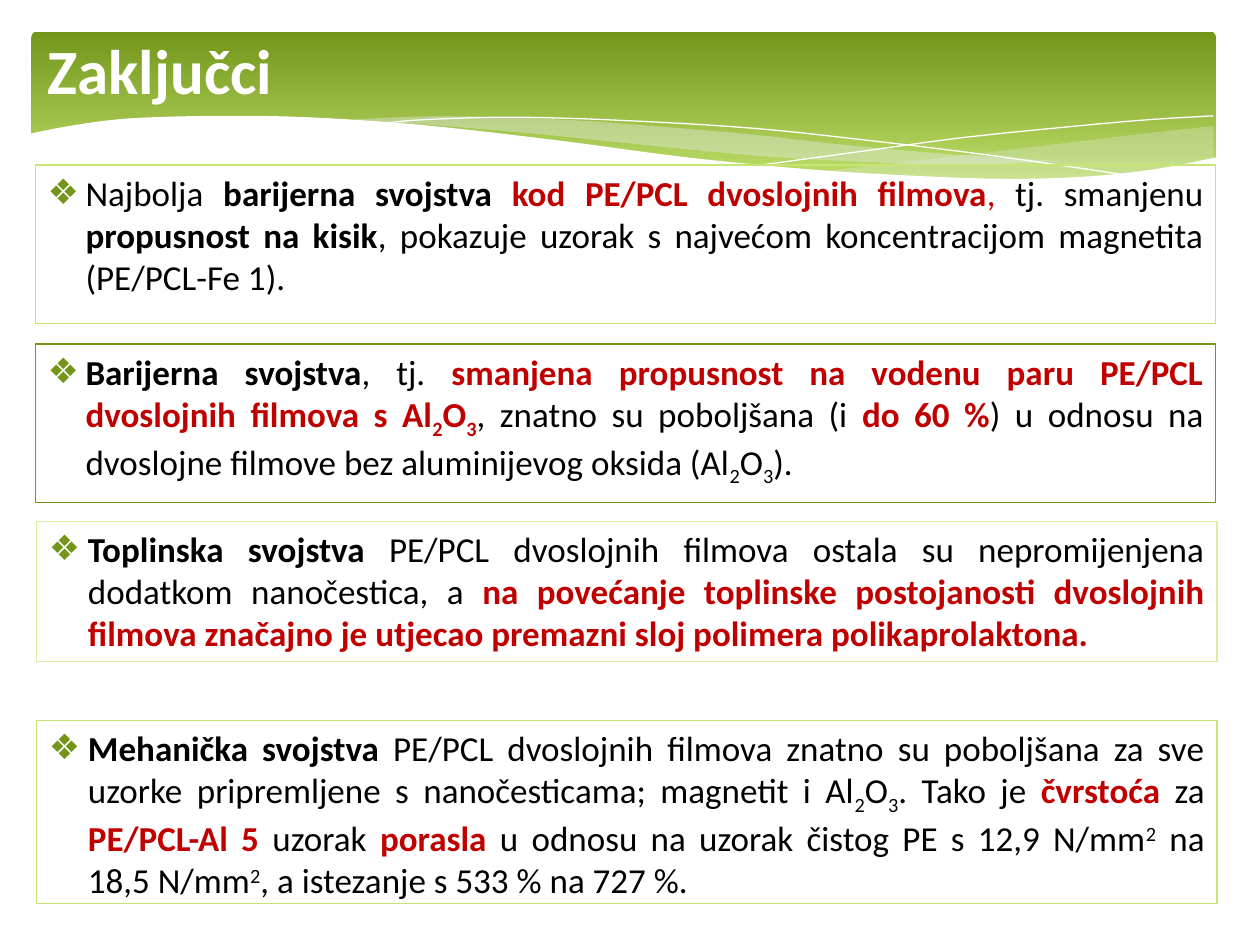
from lxml import etree
from pptx import Presentation
from pptx import util as u
from pptx.dml import color
from pptx.enum import shapes, text
from pptx.oxml import ns

COLOURS = {
    "white": "FFFFFF", "black": "000000", "red": "C00000", "mist": "E7ECED",
    "green": "72951A", "lime": "C5E672", "pale": "D8EEA1",
}

# Curves as points in pt; each is drawn as a smooth line
RIGHT_RIBBON = [
    [(693.5, 72), (654.5, 76.3), (611.3, 81.4), (540, 90), (469.4, 97.9)],
    [(490, 99.4), (528.5, 101.5), (570, 102.3), (619, 101.5), (659.5, 97.2), (693.5, 90.7)],
]
MIDDLE_RIBBON = [
    [(607, 92.2), (549.4, 88.6), (482.4, 82.8), (430.6, 77), (372.2, 72),
     (321, 68.4), (252, 66.4), (201.6, 68.4)],
    [(252.7, 72), (311, 77), (388.8, 85), (445, 90), (501.8, 92.9), (549.4, 94.3), (607, 92.2)],
]
FALLING_LINE = [
    [(218, 70.6), (242.6, 68.4), (294.5, 67), (361.4, 69.1), (431.3, 73.4),
     (493.2, 79.9), (564.5, 88.6), (644.4, 100.1)],
]
RISING_LINE = [
    [(435, 94.3), (493.2, 86.4), (551.5, 78.5), (615.6, 72), (656.6, 68.4), (693.4, 66.2)],
]
WHITE_WAVE = [
    [(694.8, 90), (661, 96.5), (622, 100.8), (574.6, 102.2), (515.5, 100.1),
     (459.4, 96.5), (393.1, 90), (316.1, 79.9), (239.8, 71.3), (175.7, 67),
     (123.8, 66.2), (73.4, 67.7), (39.6, 72), (14.4, 77)],
    [(14.4, 122.6), (694.8, 122.6)],
]

# Conclusions: left, top, width, height, indent, border, runs.
# Run marks: b bold, r red, - subscript, + superscript
CONCLUSIONS = [
    (20.2, 94.3, 674.6, 90.7, 21.6, "lime", [
        ("Najbolja ", ""), ("barijerna svojstva ", "b"),
        ("kod PE/PCL dvoslojnih filmova", "br"), (", ", "r"), ("tj. smanjenu ", ""),
        ("propusnost na kisik", "b"),
        (", pokazuje uzorak s najvećom koncentracijom magnetita (PE/PCL-Fe 1).", "")]),
    (20.2, 196.6, 674.6, 90.7, 21.6, "green", [
        ("Barijerna svojstva", "b"), (", tj. ", ""),
        ("smanjena propusnost na vodenu paru PE/PCL dvoslojnih filmova s Al", "br"),
        ("2", "br-"), ("O", "br"), ("3", "br-"),
        (", znatno su poboljšana (i ", ""), ("do 60 %", "br"),
        (") u odnosu na dvoslojne filmove bez aluminijevog oksida (Al", ""),
        ("2", "-"), ("O", ""), ("3", "-"), (").", "")]),
    (20.9, 298.1, 674.6, 79.9, 22.3, "pale", [
        ("Toplinska svojstva ", "b"),
        ("PE/PCL dvoslojnih filmova ostala su nepromijenjena dodatkom nanočestica, a ", ""),
        ("na povećanje toplinske postojanosti dvoslojnih filmova značajno je utjecao "
         "premazni sloj polimera polikaprolaktona.", "br")]),
    (20.9, 411.8, 674.6, 104.4, 22.3, "lime", [
        ("Mehanička svojstva ", "b"),
        ("PE/PCL dvoslojnih filmova znatno su poboljšana za sve uzorke pripremljene "
         "s nanočesticama; magnetit i Al", ""),
        ("2", "-"), ("O", ""), ("3", "-"), (". Tako je ", ""),
        ("čvrstoća ", "br"), ("za ", ""), ("PE/PCL-Al 5 ", "br"), ("uzorak ", ""),
        ("porasla ", "br"), ("u odnosu na uzorak čistog PE s 12,9 N/mm", ""),
        ("2", "+"), (" na 18,5 N/mm", ""), ("2", "+"),
        (", a istezanje s 533 % na 727 %.", "")]),
]


def smooth(knots, steps=5):
    """Catmull-Rom curve through the knots."""
    if len(knots) < 3:
        return knots
    padded = [knots[0], *knots, knots[-1]]
    curve = [knots[0]]
    for a, b, c, d in zip(padded, padded[1:], padded[2:], padded[3:]):
        for t in (step / steps for step in range(1, steps + 1)):
            curve.append(tuple(
                (2 * q + (r - p) * t + (2 * p - 5 * q + 4 * r - s) * t ** 2
                 + (3 * q - p - 3 * r + s) * t ** 3) / 2
                for p, q, r, s in zip(a, b, c, d)))
    return curve


class Deck:
    font = "Calibri"

    def __init__(self, slide):
        self.slide = slide

    def rgb(self, name):
        return color.RGBColor.from_string(COLOURS[name])

    def shape(self, kind, *box):
        item = self.slide.shapes.add_shape(kind, *map(u.Pt, box))
        item.shadow.inherit = False
        return item

    def banner(self, *box):
        band = self.shape(shapes.MSO_SHAPE.ROUNDED_RECTANGLE, *box)
        band.adjustments[0] = 0.03
        band.line.fill.background()
        band.fill.gradient()
        band.fill.gradient_angle = 270
        for stop, name, position in zip(band.fill.gradient_stops, ("green", "lime"), (0, 0.9)):
            stop.color.rgb = self.rgb(name)
            stop.position = position

    def curve(self, edges, fill=None, opacity=None):
        points = [(u.Pt(x), u.Pt(y)) for edge in edges for x, y in smooth(edge)]
        builder = self.slide.shapes.build_freeform(*points[0])
        builder.add_line_segments(points[1:], close=fill is not None)
        wave = builder.convert_to_shape()
        wave.shadow.inherit = False
        if fill is None:
            wave.fill.background()
            wave.line.color.rgb = self.rgb("white")
            wave.line.width = u.Pt(0)
            return
        wave.line.fill.background()
        wave.fill.solid()
        wave.fill.fore_color.rgb = self.rgb(fill)
        if opacity:
            tint = wave.fill._xPr.find(".//" + ns.qn("a:srgbClr"))
            etree.SubElement(tint, ns.qn("a:alpha"), val=str(opacity * 1000))

    def style(self, run, size, name, bold):
        run.font.name = self.font
        run.font.size = u.Pt(size)
        run.font.bold = bold
        run.font.color.rgb = self.rgb(name)

    def title(self, words, *box):
        frame = self.slide.shapes.add_textbox(*map(u.Pt, box)).text_frame
        frame.word_wrap = True
        frame.vertical_anchor = text.MSO_ANCHOR.MIDDLE
        frame.text = words
        self.style(frame.paragraphs[0].runs[0], 36, "white", True)

    def bullet(self, paragraph, indent):
        props = paragraph._p.get_or_add_pPr()
        props.set("marL", str(u.Pt(indent)))
        props.set("indent", str(-u.Pt(indent)))
        tint = etree.SubElement(props, ns.qn("a:buClr"))
        etree.SubElement(tint, ns.qn("a:srgbClr"), val=COLOURS["green"])
        etree.SubElement(props, ns.qn("a:buFont"), typeface=self.font)
        etree.SubElement(props, ns.qn("a:buChar"), char="❖")

    def conclusion(self, left, top, width, height, indent, border, runs):
        panel = self.shape(shapes.MSO_SHAPE.RECTANGLE, left, top, width, height)
        panel.fill.background()
        panel.line.color.rgb = self.rgb(border)
        panel.line.width = u.Pt(0.75)
        frame = panel.text_frame
        frame.word_wrap = True
        frame.vertical_anchor = text.MSO_ANCHOR.TOP
        paragraph = frame.paragraphs[0]
        paragraph.alignment = text.PP_ALIGN.JUSTIFY
        self.bullet(paragraph, indent)
        for words, marks in runs:
            run = paragraph.add_run()
            run.text = words
            self.style(run, 20, "red" if "r" in marks else "black", "b" in marks)
            for mark, baseline in (("-", -25000), ("+", 30000)):
                if mark in marks:
                    run.font._element.set("baseline", str(baseline))


def main():
    prs = Presentation()
    prs.slide_width, prs.slide_height = u.Pt(720), u.Pt(540)
    deck = Deck(prs.slides.add_slide(prs.slide_layouts[6]))

    # Green banner with waves
    deck.banner(18, 18, 676.8, 104.4)
    deck.curve(RIGHT_RIBBON, "mist", 29)
    deck.curve(MIDDLE_RIBBON, "mist", 40)
    deck.curve(FALLING_LINE)
    deck.curve(RISING_LINE)
    deck.curve(WHITE_WAVE, "white")

    # Title and conclusions
    deck.title("Zaključci", 20.2, 15.1, 527, 49)
    for conclusion in CONCLUSIONS:
        deck.conclusion(*conclusion)

    prs.save("out.pptx")


if __name__ == "__main__":
    main()
